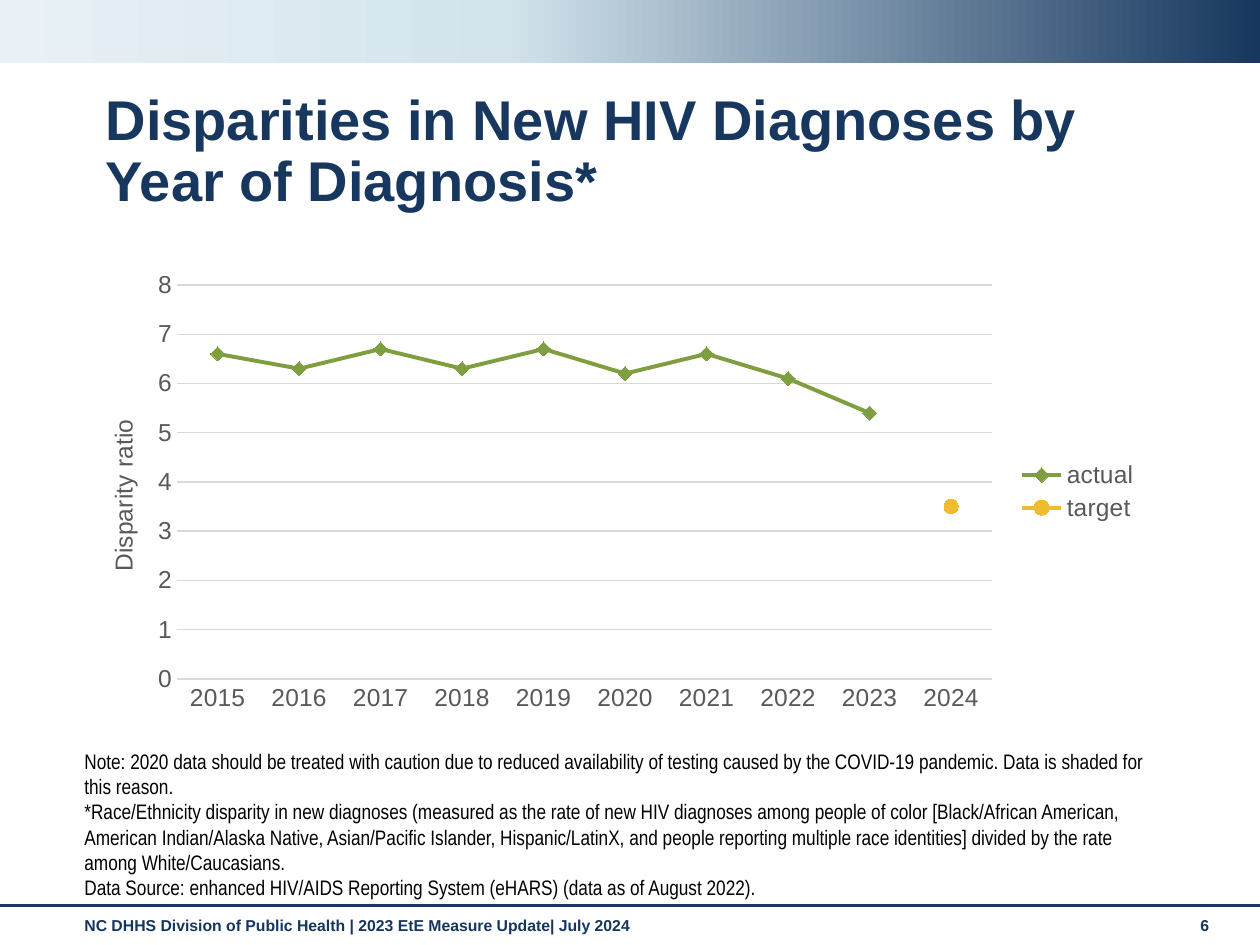
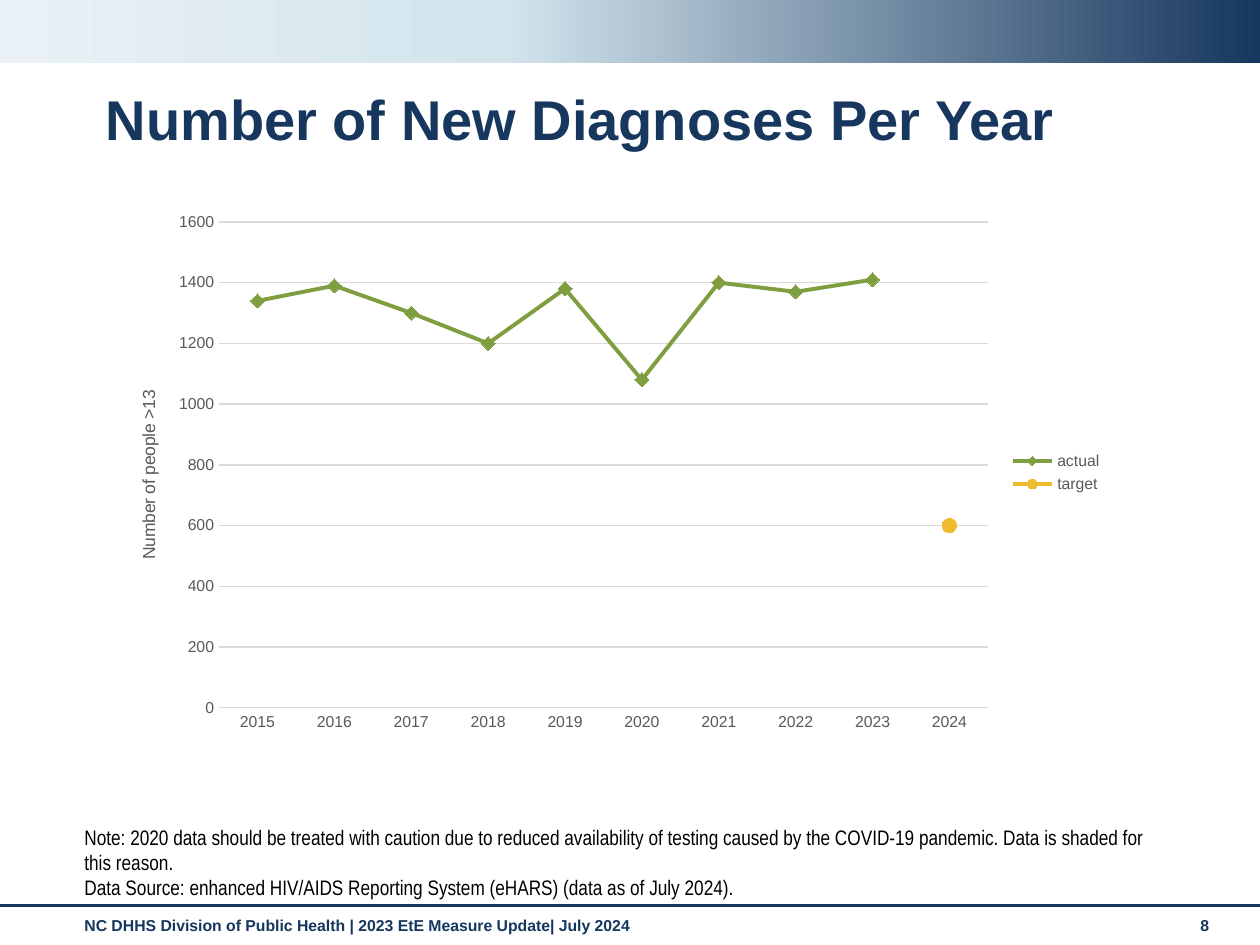
from lxml import etree
from pptx import Presentation
from pptx import util as u
from pptx.chart.data import CategoryChartData
from pptx.dml.color import RGBColor
from pptx.enum import chart as ch, shapes, text
from pptx.oxml.ns import qn
from copy import deepcopy

PX = u.Inches(1) / 126
NAVY = RGBColor(0x17, 0x37, 0x5E)
FOOTER_BLUE = RGBColor(0x15, 0x36, 0x5E)
PALE_BLUE = RGBColor(0xD3, 0xE4, 0xED)
ICE = RGBColor(0xE9, 0xF1, 0xF6)
GREEN = RGBColor(0x7F, 0x9E, 0x3F)
GOLD = RGBColor(0xEF, 0xBB, 0x2F)
GREY = RGBColor(0x59, 0x59, 0x59)
GRID = RGBColor(0xD9, 0xD9, 0xD9)
BLACK = RGBColor(0, 0, 0)

FOOTER = "NC DHHS Division of Public Health | 2023 EtE Measure Update| July 2024"
CAUTION = ("Note: 2020 data should be treated with caution due to reduced availability of "
           "testing caused by the COVID-19 pandemic. Data is shaded for this reason.")
DISPARITY = ("*Race/Ethnicity disparity in new diagnoses (measured as the rate of new HIV "
             "diagnoses among people of color [Black/African American, American Indian/Alaska "
             "Native, Asian/Pacific Islander, Hispanic/LatinX, and people reporting multiple "
             "race identities] divided by the rate among White/Caucasians.")
SOURCE = "Data Source: enhanced HIV/AIDS Reporting System (eHARS) (data as of {})."
YEARS = [str(year) for year in range(2015, 2025)]


def px(*lengths):
    return [u.Emu(round(n * PX)) for n in lengths]


def style_font(font, size, color, bold=False, name="Arial"):
    font.name, font.size, font.bold = name, u.Pt(size), bold
    font.color.rgb = color


def add_text(s, box, paragraphs, size, color, bold=False, name="Arial",
             anchor=text.MSO_ANCHOR.TOP):
    tf = s.shapes.add_textbox(*px(*box)).text_frame
    tf.word_wrap = True
    tf.vertical_anchor = anchor
    for i, words in enumerate(paragraphs):
        p = tf.paragraphs[0] if i == 0 else tf.add_paragraph()
        r = p.add_run()
        r.text = words
        style_font(r.font, size, color, bold, name)


def add_band(s):
    sp = s.shapes.add_shape(shapes.MSO_SHAPE.RECTANGLE, *px(0, 0, 1260, 63))
    sp.shadow.inherit = False
    sp.line.fill.background()
    sp.fill.gradient()
    sp.fill.gradient_angle = 180
    stops = sp._element.spPr.find(qn("a:gradFill")).find(qn("a:gsLst"))
    stops.append(deepcopy(stops[0]))
    bands = ((0, NAVY), (0.6, PALE_BLUE), (1, ICE))
    for stop, (position, color) in zip(sp.fill.gradient_stops, bands):
        stop.position = position
        stop.color.rgb = color


def add_footer(s, number):
    line = s.shapes.add_connector(shapes.MSO_CONNECTOR.STRAIGHT, *px(0, 906, 1260, 906))
    line.line.color.rgb = NAVY
    line.line.width = u.Pt(1.75)
    etree.SubElement(line._element.spPr, qn("a:effectLst"))
    add_text(s, (72, 910, 1101, 37), [FOOTER], 9, FOOTER_BLUE, bold=True)
    add_text(s, (1188, 910, 55, 38), [str(number)], 9, FOOTER_BLUE, bold=True)


def set_title(s, words):
    title = s.shapes.title
    title.left, title.top, title.width, title.height = px(93, 86, 1081, 76)
    tf = title.text_frame
    tf.word_wrap = True
    tf.auto_size = text.MSO_AUTO_SIZE.NONE
    tf.vertical_anchor = text.MSO_ANCHOR.TOP
    p = tf.paragraphs[0]
    p.alignment = text.PP_ALIGN.LEFT
    p.line_spacing = 0.9
    r = p.add_run()
    r.text = words
    style_font(r.font, 32, NAVY, bold=True)


def place(element, index, frame, box, inner=False):
    """Pin a chart part at a slide position, given the chart's own frame."""
    old = element.find(qn("c:layout"))
    if old is not None:
        element.remove(old)
    layout = etree.Element(qn("c:layout"))
    element.insert(index, layout)
    manual = etree.SubElement(layout, qn("c:manualLayout"))
    settings = [("layoutTarget", "inner")] if inner else []
    settings += [("xMode", "edge"), ("yMode", "edge")]
    x, y, width, height = frame
    fractions = ((box[0] - x) / width, (box[1] - y) / height,
                 *(n / total for n, total in zip(box[2:], (width, height))))
    settings += [(key, f"{n:.4f}") for key, n in zip("xywh", fractions)]
    for key, value in settings:
        etree.SubElement(manual, qn(f"c:{key}")).set("val", value)


def style_series(series, color, marker):
    series.smooth = False
    series.format.line.color.rgb = color
    series.format.line.width = u.Pt(2.25)
    series.marker.style, series.marker.size = marker, 8
    series.marker.format.fill.solid()
    series.marker.format.fill.fore_color.rgb = color
    series.marker.format.line.fill.background()


def style_axes(chart, size, top, step):
    for axis in (chart.category_axis, chart.value_axis):
        axis.major_tick_mark = axis.minor_tick_mark = ch.XL_TICK_MARK.NONE
        style_font(axis.tick_labels.font, size, GREY)
    axis_line = chart.category_axis.format.line
    axis_line.color.rgb, axis_line.width = GRID, u.Pt(0.75)
    value = chart.value_axis
    value.minimum_scale, value.maximum_scale, value.major_unit = 0, top, step
    value.format.line.fill.background()
    value.has_major_gridlines = True
    grid = value.major_gridlines.format.line
    grid.color.rgb, grid.width = GRID, u.Pt(0.75)


def add_axis_title(chart, words, size, frame, corner):
    title = chart.value_axis.axis_title
    r = title.text_frame.paragraphs[0].add_run()
    r.text = words
    style_font(r.font, size, GREY)
    body = title.text_frame._txBody.find(qn("a:bodyPr"))
    body.set("rot", "-5400000")
    body.set("vert", "horz")
    place(title._element, 1, frame, corner)


def add_trend(s, frame, plot, actual, target, scale, label, corner, label_size, size):
    """Line chart of yearly results, with the 2024 target as a single point."""
    data = CategoryChartData()
    data.categories = YEARS
    data.add_series("actual", actual + [None])
    data.add_series("target", [None] * len(actual) + [target])
    chart = s.shapes.add_chart(ch.XL_CHART_TYPE.LINE_MARKERS, *px(*frame), data).chart
    style_font(chart.font, label_size, BLACK)
    chart.has_title = False
    chart.has_legend = True
    chart.legend.position = ch.XL_LEGEND_POSITION.RIGHT
    chart.legend.include_in_layout = False
    style_font(chart.legend.font, size, GREY)
    chart.plots[0].vary_by_categories = False
    markers = ((GREEN, ch.XL_MARKER_STYLE.DIAMOND), (GOLD, ch.XL_MARKER_STYLE.CIRCLE))
    for series, (color, marker) in zip(chart.plots[0].series, markers):
        style_series(series, color, marker)
    style_axes(chart, size, *scale)
    add_axis_title(chart, label, label_size, frame, corner)
    place(chart._chartSpace.chart.plotArea, 0, frame, plot, inner=True)


def add_slide(prs, number, title, notes):
    s = prs.slides.add_slide(prs.slide_layouts[5])
    add_footer(s, number)
    add_band(s)
    set_title(s, title)
    add_text(s, (72, 861, 1101, 45), notes, 12, BLACK, name="Arial Narrow",
             anchor=text.MSO_ANCHOR.BOTTOM)
    return s


def main():
    prs = Presentation()
    prs.slide_width, prs.slide_height = px(1260, 945)

    s = add_slide(prs, 6, "Disparities in New HIV Diagnoses by Year of Diagnosis*",
                  [CAUTION, DISPARITY, SOURCE.format("August 2022")])
    add_trend(s, frame=(72, 262, 1080, 459), plot=(177, 285, 815, 394),
              actual=[6.6, 6.3, 6.7, 6.3, 6.7, 6.2, 6.6, 6.1, 5.4], target=3.5,
              scale=(8, 1), label="Disparity ratio", corner=(103, 415),
              label_size=14, size=14)

    s = add_slide(prs, 8, "Number of New Diagnoses Per Year",
                  [CAUTION, SOURCE.format("July 2024")])
    add_trend(s, frame=(106, 202, 1009, 541), plot=(219, 222, 769, 486),
              actual=[1340, 1390, 1300, 1200, 1380, 1080, 1400, 1370, 1410], target=600,
              scale=(1600, 200), label="Number of people >13", corner=(134, 387),
              label_size=10, size=9)

    prs.save("out.pptx")


if __name__ == "__main__":
    main()
